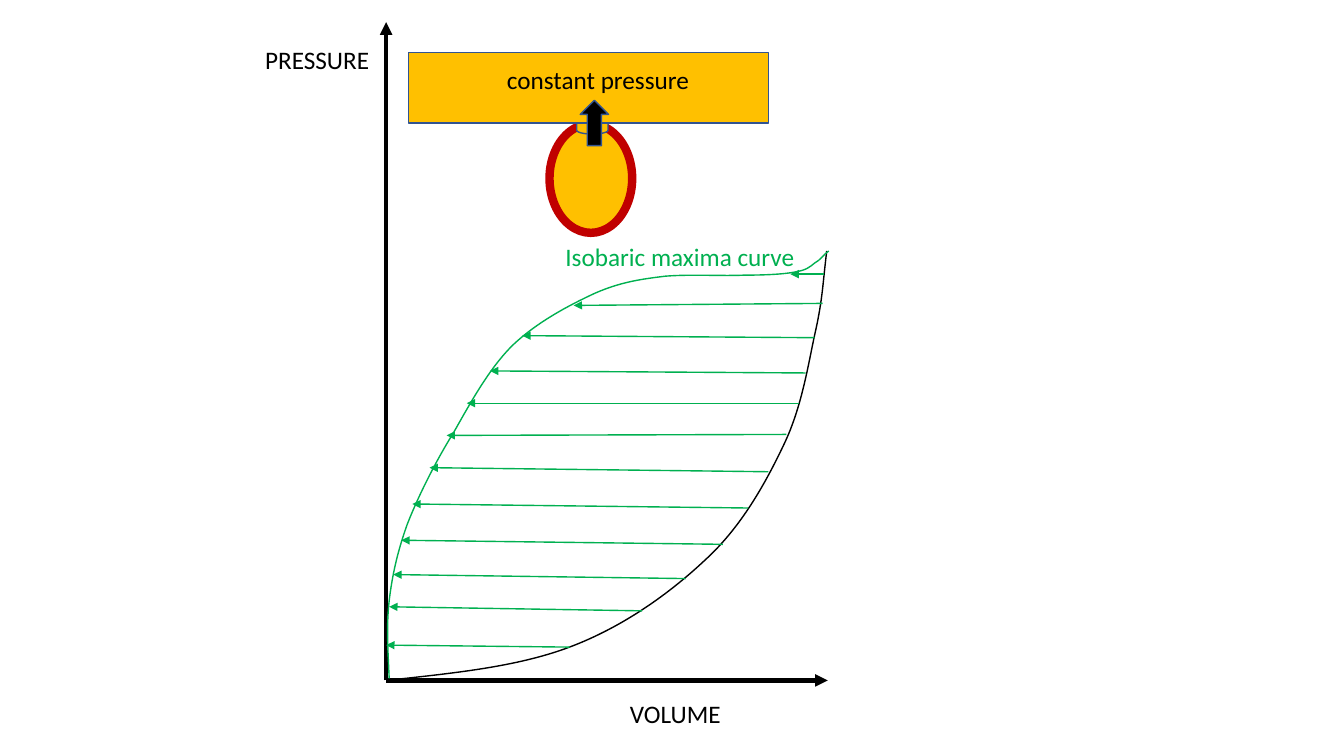
"""Pressure-volume diagram with the isobaric maxima curve."""
from lxml import etree
from pptx import Presentation
from pptx.dml.color import RGBColor
from pptx.enum import shapes, text
from pptx.oxml.ns import qn
from pptx.util import Inches, Pt

COLORS = {"black": "000000", "green": "00B050", "gold": "FFC000",
          "red": "C00000", "blue": "325491"}
FONT = "Calibri"
ORIGIN = (3.83, 6.75)

FILLING_CURVE = [
    (3.84, 6.75), (4.48, 6.68), (5.12, 6.62), (5.65, 6.42),
    (6.18, 6.22), (6.64, 5.89), (7, 5.55),
    (7.36, 5.22), (7.6, 4.78), (7.78, 4.4),
    (7.96, 4.02), (8.02, 3.59), (8.09, 3.28),
    (8.16, 2.96), (8.16, 2.82), (8.2, 2.49)]
MAXIMA_CURVE = [
    (8.22, 2.49), (8.17, 2.52), (8.14, 2.58), (8.08, 2.61),
    (8.03, 2.65), (8, 2.68), (7.88, 2.7),
    (7.77, 2.72), (7.6, 2.73), (7.38, 2.73),
    (7.17, 2.74), (6.85, 2.72), (6.6, 2.74),
    (6.35, 2.77), (6.15, 2.8), (5.9, 2.91),
    (5.64, 3.03), (5.32, 3.2), (5.08, 3.43),
    (4.85, 3.66), (4.67, 3.99), (4.5, 4.29),
    (4.32, 4.58), (4.15, 4.92), (4.04, 5.2),
    (3.94, 5.48), (3.89, 5.71), (3.86, 5.96),
    (3.83, 6.22), (3.85, 6.48), (3.86, 6.73)]
ISOBARS = [
    ((5.65, 6.42), (3.83, 6.4)), ((6.37, 6.06), (3.86, 6.02)),
    ((6.8, 5.74), (3.9, 5.7)), ((7.17, 5.4), (3.98, 5.36)),
    ((7.42, 5.04), (4.09, 5)), ((7.8, 4.31), (4.43, 4.32)),
    ((7.92, 4), (4.63, 4)), ((7.99, 3.7), (4.86, 3.68)),
    ((8.08, 3.35), (5.18, 3.33)), ((8.16, 3.01), (5.69, 3.03)),
    ((8.17, 2.72), (7.84, 2.72)), ((7.62, 4.68), (4.26, 4.64))]


def rgb(name):
    return RGBColor.from_string(COLORS[name])


def set_line(shape, color, width):
    shape.line.color.rgb = rgb(color)
    shape.line.width = Pt(width)


def add_arrow(page, start, end, color, width):
    arrow = page.shapes.add_connector(
        shapes.MSO_CONNECTOR.STRAIGHT, *map(Inches, start + end))
    set_line(arrow, color, width)
    properties = arrow._element.spPr
    etree.SubElement(properties.find(qn("a:ln")), qn("a:tailEnd"), type="triangle")
    etree.SubElement(properties, qn("a:effectLst"))


def bend_segments(curve):
    lines = list(curve._element.iter(qn("a:lnTo")))
    for first in range(0, len(lines), 3):
        group = lines[first:first + 3]
        bend = etree.Element(qn("a:cubicBezTo"))
        group[0].addprevious(bend)
        for line in group:
            bend.append(line[0])
            line.getparent().remove(line)


def add_curve(page, knots, color):
    start, *rest = [(Inches(x), Inches(y)) for x, y in knots]
    builder = page.shapes.build_freeform(*start)
    builder.add_line_segments(rest, close=False)
    curve = builder.convert_to_shape()
    bend_segments(curve)
    curve.shadow.inherit = False
    curve.fill.background()
    set_line(curve, color, 1)


def add_label(page, words, left, top, width, color="black", align=text.PP_ALIGN.LEFT):
    box = page.shapes.add_textbox(*map(Inches, (left, top, width, 0.4)))
    frame = box.text_frame
    frame.word_wrap = True
    frame.auto_size = text.MSO_AUTO_SIZE.SHAPE_TO_FIT_TEXT
    frame.text = words
    para = frame.paragraphs[0]
    para.alignment = align
    font = para.runs[0].font
    font.name, font.size = FONT, Pt(18)
    font.color.rgb = rgb(color)


def add_part(page, kind, area, fill, line="blue", width=1, rotation=0):
    part = page.shapes.add_shape(kind, *map(Inches, area))
    part.shadow.inherit = False
    part.fill.solid()
    part.fill.fore_color.rgb = rgb(fill)
    set_line(part, line, width)
    part.rotation = rotation


def add_chamber(page):
    kind = shapes.MSO_SHAPE
    add_part(page, kind.OVAL, (5.45, 1.23, 0.82, 1.08), "gold", "red", 6)
    add_part(page, kind.FLOWCHART_MAGNETIC_DISK, (5.72, 1.11, 0.31, 0.22), "gold")
    add_part(page, kind.RECTANGLE, (4.05, 0.52, 3.57, 0.7), "gold")
    add_part(page, kind.RIGHT_ARROW, (5.67, 1.08, 0.45, 0.28), "black", rotation=270)
    add_label(page, "constant pressure", 4.93, 0.59, 2.2)


def main():
    deck = Presentation()
    deck.slide_width, deck.slide_height = Inches(13.33), Inches(7.5)
    page = deck.slides.add_slide(deck.slide_layouts[6])
    for end in ((8.21, 6.75), (3.83, 0.22)):
        add_arrow(page, ORIGIN, end, "black", 3)
    add_curve(page, FILLING_CURVE, "black")
    add_curve(page, MAXIMA_CURVE, "green")
    add_label(page, "VOLUME", 6.15, 6.88, 2.2)
    add_label(page, "PRESSURE", 1.56, 0.39, 2.2, align=text.PP_ALIGN.RIGHT)
    for start, end in ISOBARS:
        add_arrow(page, start, end, "green", 1)
    add_label(page, "Isobaric maxima curve", 5.51, 2.34, 3, "green")
    add_chamber(page)
    deck.save("out.pptx")


if __name__ == "__main__":
    main()
